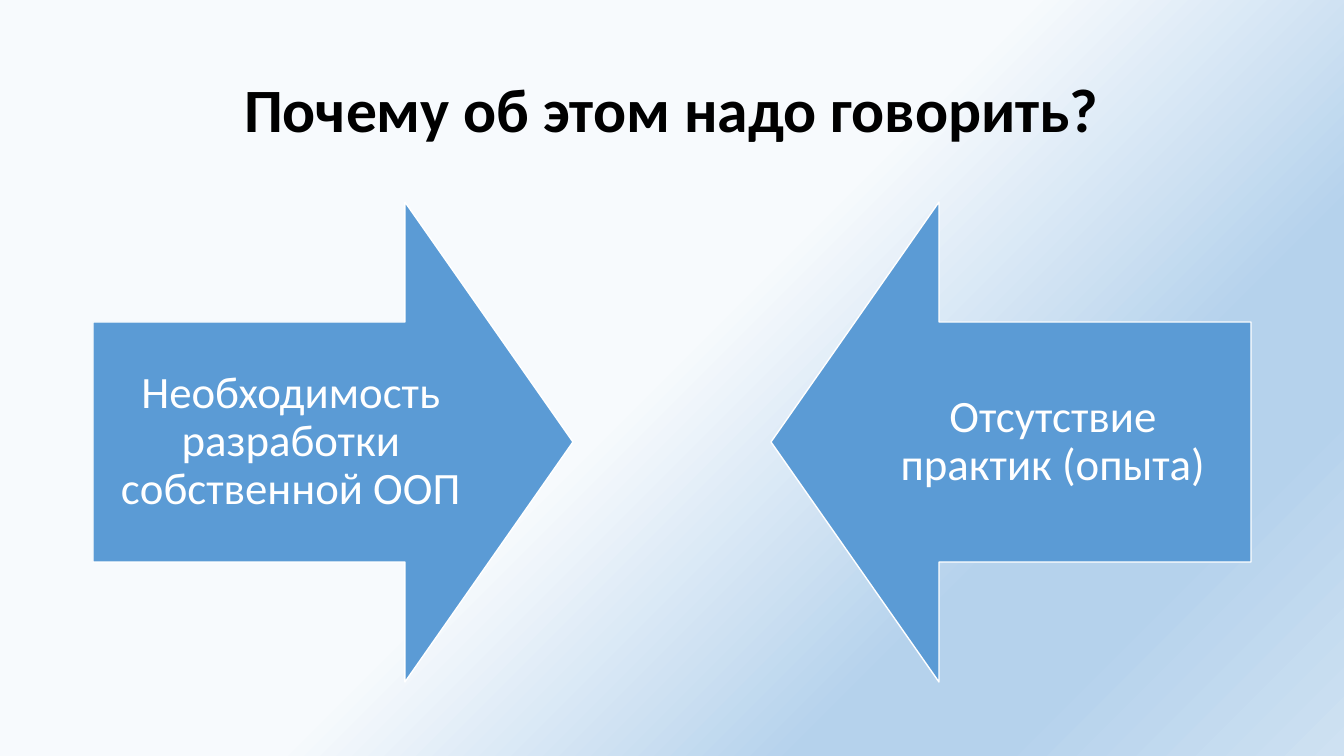
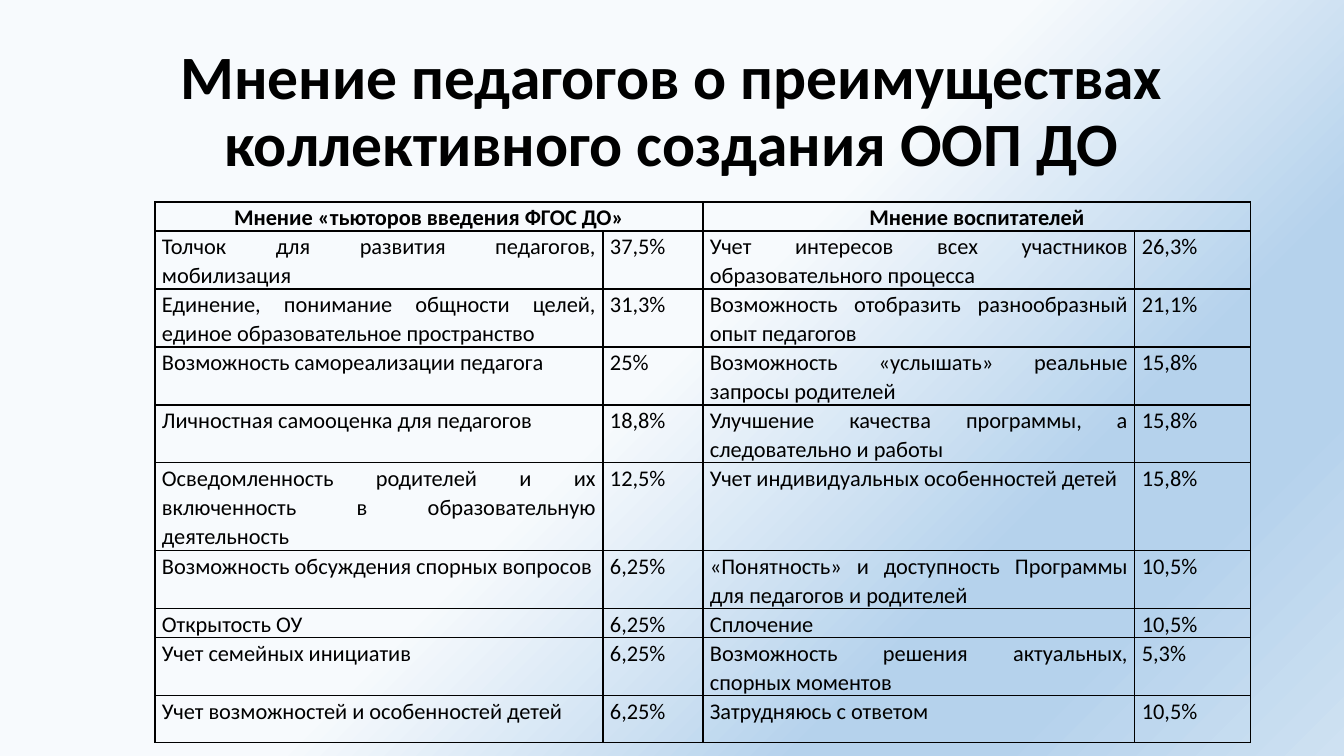
from copy import deepcopy

from lxml import etree
from pptx import Presentation
from pptx.dml.color import RGBColor
from pptx.enum.shapes import MSO_SHAPE
from pptx.enum.text import MSO_ANCHOR, PP_ALIGN
from pptx.oxml import parse_xml
from pptx.oxml.ns import nsdecls, qn
from pptx.util import Pt

PX = 9071.43  # EMU in one pixel
WIDTH, HEIGHT = 1344, 756
FONT = "Calibri"
BLACK = RGBColor(0x00, 0x00, 0x00)
WHITE = RGBColor(0xFF, 0xFF, 0xFF)
BLUE = RGBColor(0x5B, 0x9B, 0xD5)
BACKDROP = [
    (0.49, RGBColor(0xF7, 0xFA, 0xFD)),
    (0.74, RGBColor(0xB5, 0xD2, 0xEC)),
    (0.83, RGBColor(0xB5, 0xD2, 0xEC)),
    (1.0, RGBColor(0xCE, 0xE1, 0xF2)),
]
RIGHT_ARROW, LEFT_ARROW = MSO_SHAPE.RIGHT_ARROW, MSO_SHAPE.LEFT_ARROW
CENTER, JUSTIFY = PP_ALIGN.CENTER, PP_ALIGN.JUSTIFY
MIDDLE, TOP = MSO_ANCHOR.MIDDLE, MSO_ANCHOR.TOP

TITLE_BOX = (92, 40, 1160, 146)
ARROWS_BOX = (93, 202, 1158, 480)
TABLE_BOX = (155, 202, 1096, 545)

COLUMNS = [448, 100, 432, 116]
ROWS = [29, 58, 58, 58, 58, 88, 58, 29, 58, 47]
HEADINGS = ["Мнение «тьюторов введения ФГОС ДО»", "Мнение воспитателей"]
OPINIONS = [
    ("Толчок для развития педагогов, мобилизация", "37,5%",
     "Учет интересов всех участников образовательного процесса", "26,3%"),
    ("Единение, понимание общности целей, единое образовательное пространство", "31,3%",
     "Возможность отобразить разнообразный опыт педагогов", "21,1%"),
    ("Возможность самореализации педагога", "25%",
     "Возможность «услышать» реальные запросы родителей", "15,8%"),
    ("Личностная самооценка для педагогов", "18,8%",
     "Улучшение качества программы, а следовательно и работы", "15,8%"),
    ("Осведомленность родителей и их включенность в образовательную деятельность", "12,5%",
     "Учет индивидуальных особенностей детей", "15,8%"),
    ("Возможность обсуждения спорных вопросов", "6,25%",
     "«Понятность» и доступность Программы для педагогов и родителей", "10,5%"),
    ("Открытость ОУ", "6,25%", "Сплочение", "10,5%"),
    ("Учет семейных инициатив", "6,25%",
     "Возможность решения актуальных, спорных моментов", "5,3%"),
    ("Учет возможностей и особенностей детей", "6,25%", "Затрудняюсь с ответом", "10,5%"),
]


def px(length):
    return round(length * PX)


def write(frame, text, size, color, align, spacing, bold=False):
    frame.word_wrap = True
    paragraph = frame.paragraphs[0]
    paragraph.text = text
    paragraph.alignment = align
    paragraph.line_spacing = spacing
    font = paragraph.font
    font.name, font.size, font.bold = FONT, Pt(size), bold
    font.color.rgb = color


def set_margins(holder, across, down):
    holder.margin_left = holder.margin_right = px(across)
    holder.margin_top = holder.margin_bottom = px(down)


def paint_backdrop(master):
    fill = master.background.fill
    fill.gradient()
    fill.gradient_angle = 315
    stops = master.element.find(".//" + qn("a:gsLst"))
    while len(stops) < len(BACKDROP):
        stops.append(deepcopy(stops[0]))
    for stop, (position, color) in zip(fill.gradient_stops, BACKDROP):
        stop.position = position
        stop.color.rgb = color


def add_titled_slide(prs, title):
    slide = prs.slides.add_slide(prs.slide_layouts[6])
    frame = slide.shapes.add_textbox(*map(px, TITLE_BOX)).text_frame
    frame.vertical_anchor = MIDDLE
    write(frame, title, 44, BLACK, CENTER, 0.9, bold=True)
    return slide


def add_facing_arrows(slide, box, left_text, right_text):
    left, top, width, side = box
    for preset, x, text in (
        (RIGHT_ARROW, left, left_text),
        (LEFT_ARROW, left + width - side, right_text),
    ):
        arrow = slide.shapes.add_shape(preset, px(x), px(top), px(side), px(side))
        arrow.adjustments[0], arrow.adjustments[1] = 0.5, 0.35
        arrow.shadow.inherit = False
        arrow.fill.solid()
        arrow.fill.fore_color.rgb = BLUE
        arrow.line.color.rgb = WHITE
        arrow.line.width = Pt(1)
        frame = arrow.text_frame
        frame.vertical_anchor = MIDDLE
        set_margins(frame, 25, 25)
        write(frame, text, 32, WHITE, CENTER, 0.9)


def draw_borders(cell):
    properties = cell._tc.get_or_add_tcPr()
    for index, edge in enumerate(("lnL", "lnR", "lnT", "lnB")):
        border = parse_xml(f'<a:{edge} {nsdecls("a")} w="{Pt(1)}"/>')
        fill = etree.SubElement(border, qn("a:solidFill"))
        etree.SubElement(fill, qn("a:srgbClr"), val=str(BLACK))
        properties.insert(index, border)


def add_opinion_table(slide, box):
    table = slide.shapes.add_table(len(ROWS), len(COLUMNS), *map(px, box)).table
    table.first_row = table.horz_banding = False
    for column, width in zip(table.columns, COLUMNS):
        column.width = px(width)
    for row, height in zip(table.rows, ROWS):
        row.height = px(height)

    # Plain cells with thin borders
    for cell in table.iter_cells():
        cell.fill.background()
        cell.vertical_anchor = TOP
        set_margins(cell, 7, 0)
        draw_borders(cell)

    # Each heading spans an opinion and its share
    for number, heading in enumerate(HEADINGS):
        cell = table.cell(0, 2 * number)
        cell.merge(table.cell(0, 2 * number + 1))
        write(cell.text_frame, heading, 16, BLACK, CENTER, 1.07, bold=True)
    for r, opinions in enumerate(OPINIONS, 1):
        for c, text in enumerate(opinions):
            write(table.cell(r, c).text_frame, text, 16, BLACK, JUSTIFY, 1.07)


def main():
    prs = Presentation()
    prs.slide_width, prs.slide_height = px(WIDTH), px(HEIGHT)
    paint_backdrop(prs.slide_master)

    reasons = add_titled_slide(prs, "Почему об этом надо говорить?")
    add_facing_arrows(reasons, ARROWS_BOX,
                      "Необходимость разработки собственной ООП",
                      "Отсутствие практик (опыта)")

    survey = add_titled_slide(
        prs, "Мнение педагогов о преимуществах коллективного создания ООП ДО")
    add_opinion_table(survey, TABLE_BOX)

    prs.save("out.pptx")


if __name__ == "__main__":
    main()
